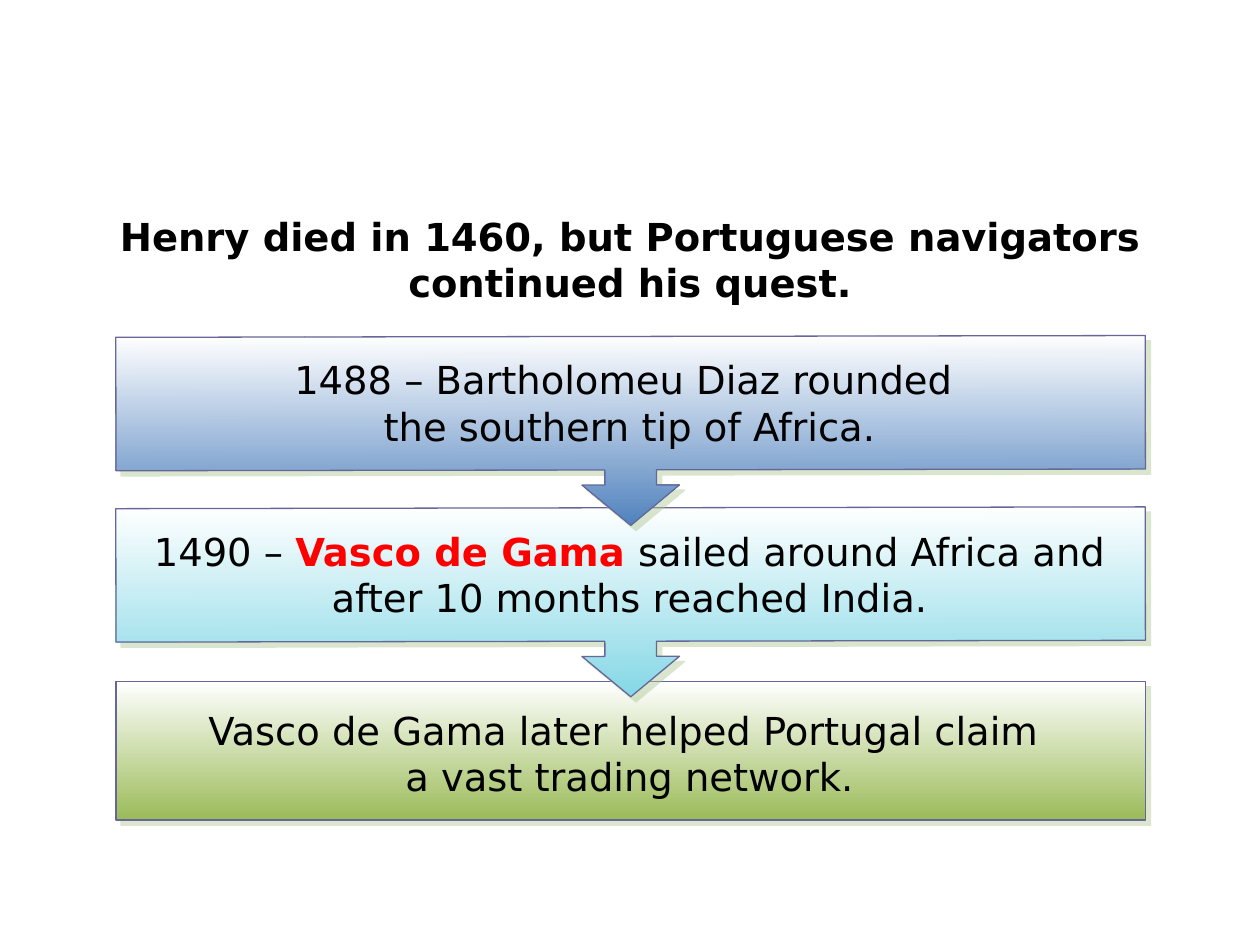
from lxml.etree import SubElement
from pptx import Presentation
from pptx.dml.color import RGBColor
from pptx.enum.shapes import MSO_SHAPE as Shape
from pptx.enum.text import MSO_ANCHOR as Anchor, PP_ALIGN as Align
from pptx.oxml.ns import qn
from pptx.util import Inches, Pt

COLS, ROWS = 100, 75
LEFT, WIDTH = 9.2, 81.7
TEXT_LEFT, TEXT_WIDTH, TEXT_HEIGHT = 10.8, 78.3, 8.4
FIRST_TOP, STEP, CALLOUT_HEIGHT = 26.7, 13.6, 15
BOX_TOP, BOX_HEIGHT = 54.1, 11


def rgb(value):
    return RGBColor.from_string(value)


class SlideBuilder:
    font = {"name": "DejaVu Sans", "size": Pt(22), "bold": False}
    frame = {"word_wrap": True, "vertical_anchor": Anchor.TOP}
    line_color, line_width = "666699", Pt(0.75)

    def __init__(self, prs):
        self.prs = prs
        self.s = prs.slides.add_slide(prs.slide_layouts[6])

    def place(self, x, y, w, h):
        dx, dy = self.prs.slide_width / COLS, self.prs.slide_height / ROWS
        return [round(v) for v in (x * dx, y * dy, w * dx, h * dy)]

    def panel(self, kind, at, stops, shadow):
        sp = self.s.shapes.add_shape(kind, *self.place(*at))
        sp.fill.gradient()
        sp.fill.gradient_angle = 270
        for stop, (position, color) in zip(sp.fill.gradient_stops, enumerate(stops)):
            stop.position = position
            stop.color.rgb = rgb(color)
        sp.line.color.rgb = rgb(self.line_color)
        sp.line.width = self.line_width
        self.cast_shadow(sp, shadow)
        return sp

    def cast_shadow(self, sp, color):
        sp.shadow.inherit = False
        effects = sp._element.spPr.find(qn("a:effectLst"))
        outer = SubElement(effects, qn("a:outerShdw"), blurRad="0",
                           dist=str(Pt(4.2)), dir="2700000",
                           algn="ctr", rotWithShape="0")
        tint = SubElement(outer, qn("a:srgbClr"), val=color)
        SubElement(tint, qn("a:alpha"), val="46000")

    def callout(self, at, color):
        sp = self.panel(Shape.UP_ARROW_CALLOUT, at, (color, "FFFFFF"), "ADC793")
        for i, value in enumerate((0.273, 0.258, 0.214, 0.706)):
            sp.adjustments[i] = value
        sp.rotation = 179.9
        sp._element.spPr.find(qn("a:xfrm")).set("flipH", "1")

    def text(self, at, lines, space_after=0):
        tf = self.s.shapes.add_textbox(*self.place(*at)).text_frame
        for key, value in self.frame.items():
            setattr(tf, key, value)
        p = tf.paragraphs[0]
        p.alignment = Align.CENTER
        p.space_after = Pt(space_after)
        for i, runs in enumerate(lines):
            if i:
                p.add_line_break()
            for content, color, bold in runs:
                r = p.add_run()
                r.text = content
                for key, value in {**self.font, "bold": bold}.items():
                    setattr(r.font, key, value)
                r.font.color.rgb = rgb(color)


def plain(content):
    return [(content, "000000", False)]


def main():
    prs = Presentation()
    prs.slide_width, prs.slide_height = Inches(10), Inches(7.5)
    b = SlideBuilder(prs)

    b.panel(Shape.RECTANGLE, (LEFT, BOX_TOP, WIDTH, BOX_HEIGHT),
            ("FFFFFF", "9BBB59"), "B3C793")
    b.text((TEXT_LEFT, BOX_TOP + 1.5, TEXT_WIDTH, TEXT_HEIGHT),
           [plain("Vasco de Gama later helped Portugal claim "),
            plain("a vast trading network.")])

    events = [
        ("4F81BD", [plain("1488 – Bartholomeu Diaz rounded "),
                    plain("the southern tip of Africa.")]),
        ("83D7E5", [plain("1490 – ") + [("Vasco de Gama ", "FF0000", True)]
                    + plain("sailed around Africa and after 10 months reached India.")]),
    ]
    for i, (color, lines) in reversed(list(enumerate(events))):
        top = FIRST_TOP + i * STEP
        b.callout((LEFT, top, WIDTH, CALLOUT_HEIGHT), color)
        b.text((TEXT_LEFT, top + 1.1, TEXT_WIDTH, TEXT_HEIGHT), lines)

    b.text((5, 16.4, 90, 6.7),
           [[("Henry died in 1460, but Portuguese navigators continued his quest.",
              "000000", True)]], space_after=15.9)
    prs.save("out.pptx")


if __name__ == "__main__":
    main()
